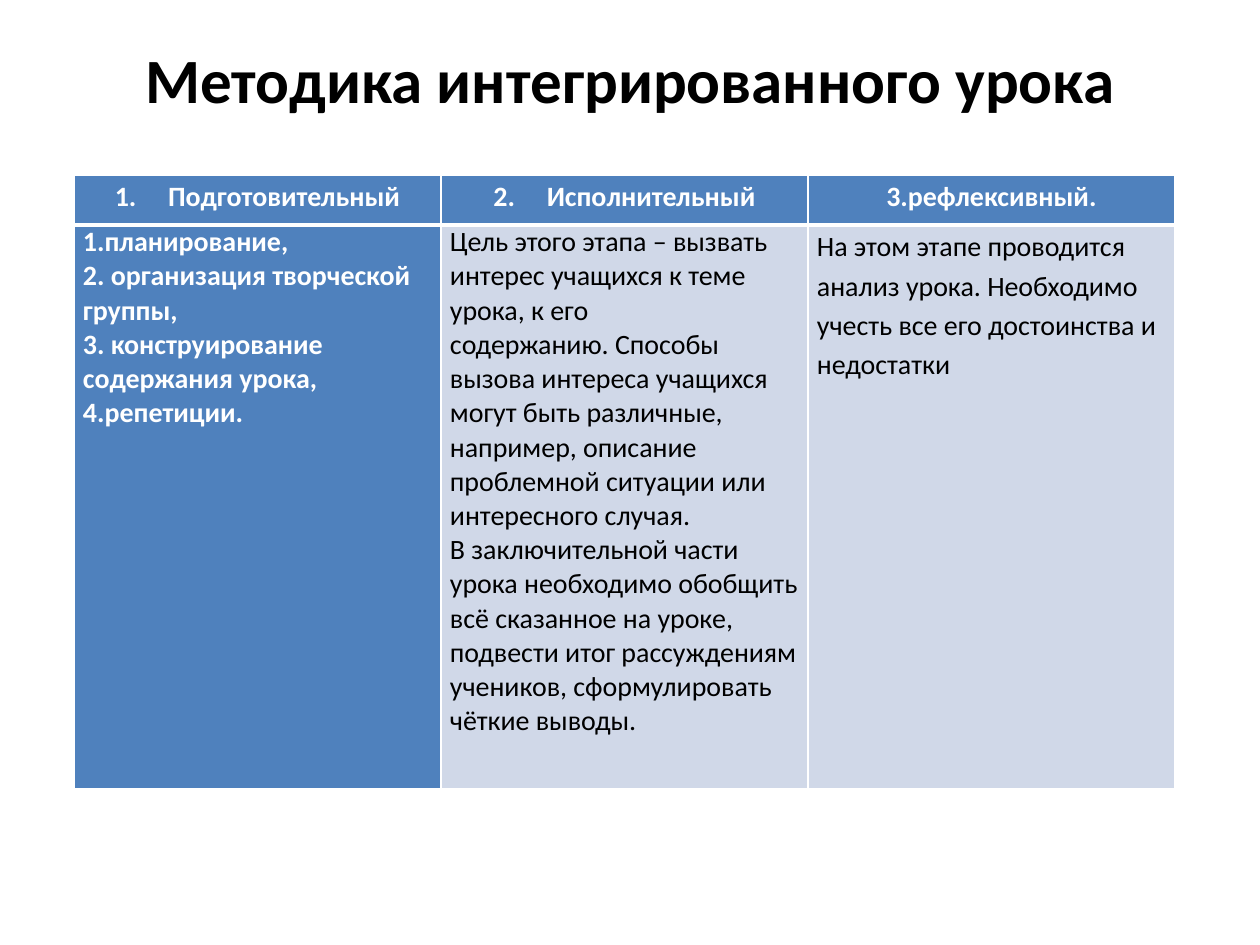
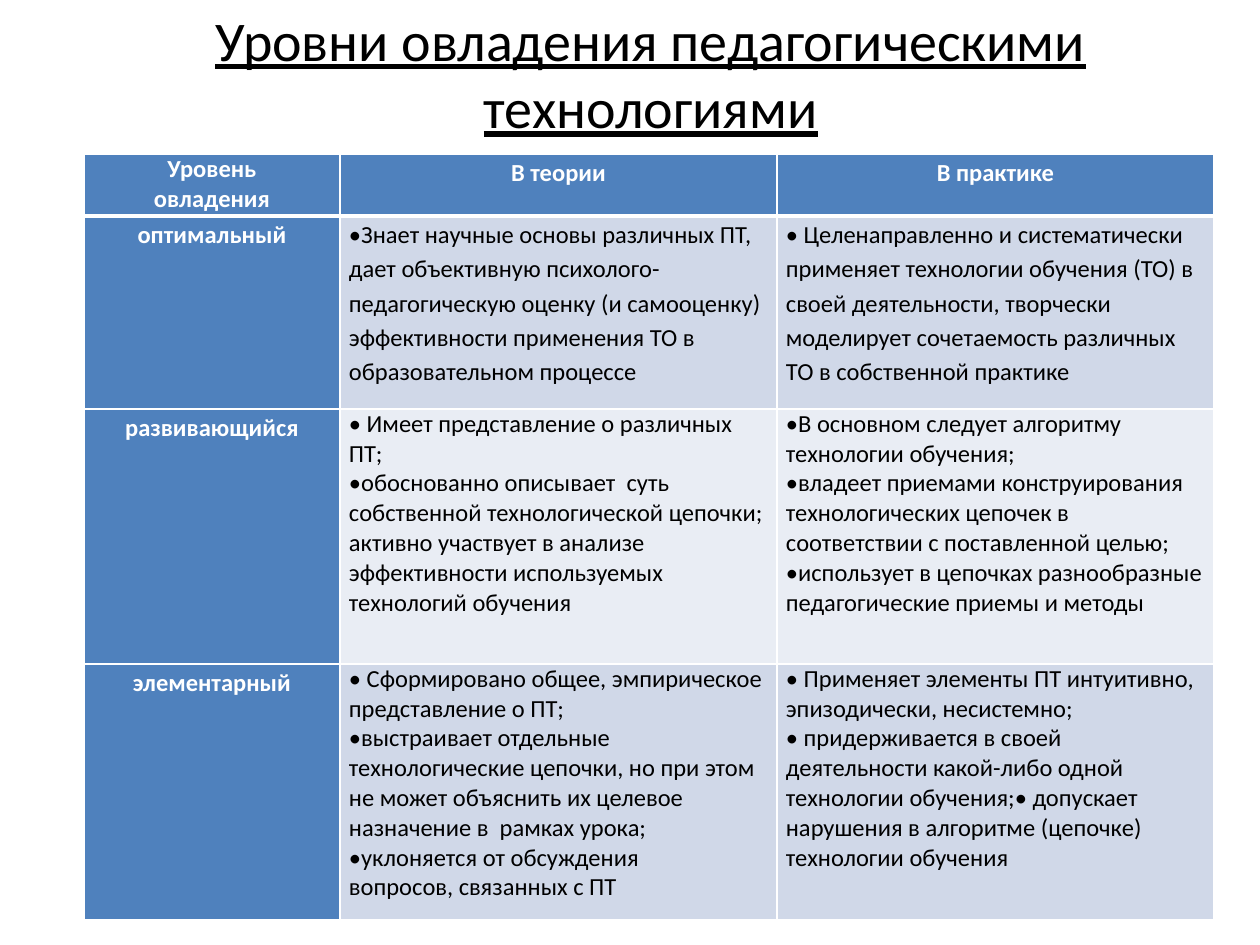
from lxml.etree import SubElement
from pptx import Presentation
from pptx.dml.color import RGBColor
from pptx.enum.text import MSO_ANCHOR, PP_ALIGN
from pptx.oxml.ns import qn
from pptx.util import Emu, Pt

PX = 914400 // 126
FONT = "Calibri"
BLACK, WHITE, ACCENT = "000000", "FFFFFF", "4F81BD"
BANDS = ["E9EDF4", "D0D8E8"]
WIDE_GAP = "|"       # a widened space between a number and its heading
FIXED_SPACE = "~"    # a space at which a line may not break
LOOSE_SPACING = 1.15

STAGES = [
    [["1.|Подготовительный"], ["2.|Исполнительный"], ["3.рефлексивный."]],
    [
        [
            "1.планирование,",
            "2. организация творческой группы,",
            "3. конструирование содержания урока,",
            "4.репетиции.",
        ],
        [
            "Цель этого этапа – вызвать интерес учащихся к теме урока, к его "
            "содержанию.~Способы вызова интереса учащихся могут быть различные, "
            "например, описание проблемной ситуации или интересного случая.",
            "В заключительной части урока необходимо обобщить всё сказанное на уроке, "
            "подвести итог рассуждениям учеников, сформулировать чёткие выводы.",
        ],
        [
            "На этом этапе проводится анализ урока. Необходимо учесть все его "
            "достоинства и недостатки",
        ],
    ],
]

LEVELS = [
    [["Уровень", "овладения"], ["В теории"], ["В практике"]],
    [
        ["оптимальный"],
        [
            "•Знает научные основы различных ПТ, дает объективную "
            "психолого-педагогическую оценку (и самооценку) эффективности "
            "применения ТО в образовательном процессе",
        ],
        [
            "• Целенаправленно и систематически применяет технологии обучения (ТО) "
            "в своей деятельности, творчески моделирует сочетаемость различных ТО "
            "в собственной практике",
        ],
    ],
    [
        ["развивающийся"],
        [
            "• Имеет представление о различных ПТ;",
            "•обоснованно описывает~ суть собственной технологической цепочки; "
            "активно участвует в анализе эффективности используемых технологий обучения",
        ],
        [
            "•В основном следует алгоритму технологии обучения;",
            "•владеет приемами конструирования технологических цепочек в соответствии "
            "с поставленной целью;",
            "•использует в цепочках разнообразные педагогические приемы и методы",
        ],
    ],
    [
        ["элементарный"],
        [
            "• Сформировано общее, эмпирическое представление о ПТ;",
            "•выстраивает отдельные технологические цепочки, но при этом не может "
            "объяснить их целевое назначение в~ рамках урока;",
            "•уклоняется от обсуждения",
            "вопросов, связанных с ПТ",
        ],
        [
            "• Применяет элементы ПТ интуитивно, эпизодически, несистемно;",
            "• придерживается в своей деятельности какой-либо одной технологии "
            "обучения;• допускает нарушения в алгоритме (цепочке) технологии обучения",
        ],
    ],
]


def px(length):
    return Emu(length * PX)


def rgb(color):
    return RGBColor.from_string(color)


def set_all(target, values):
    for name, value in values.items():
        setattr(target, name, value)


def add_run(paragraph, text, color, **font_format):
    run = paragraph.add_run()
    run.text = text.replace(FIXED_SPACE, chr(160))
    set_all(run.font, {"name": FONT, **font_format})
    run.font.color.rgb = rgb(color)
    return run


def add_title(slide, left, top, width, height, text, size, **font_format):
    frame = slide.shapes.add_textbox(px(left), px(top), px(width), px(height)).text_frame
    # Text sits one line height above the middle of the box
    line_height = Pt(size * 1.22)
    set_all(frame, {
        "word_wrap": True,
        "vertical_anchor": MSO_ANCHOR.MIDDLE,
        "margin_bottom": frame.margin_top + line_height,
    })
    paragraph = frame.paragraphs[0]
    paragraph.alignment = PP_ALIGN.CENTER
    add_run(paragraph, text, BLACK, size=Pt(size), **font_format)


def set_borders(cell, row):
    widths = {"L": 1, "R": 1, "T": 3 if row == 1 else 1, "B": 3 if row == 0 else 1}
    properties = cell._tc.get_or_add_tcPr()
    for side, width in widths.items():
        line = SubElement(properties, qn(f"a:ln{side}"), w=str(Pt(width)))
        fill = SubElement(line, qn("a:solidFill"))
        SubElement(fill, qn("a:srgbClr"), val=WHITE)


def fill_cell(cell, lines, row, column, size):
    is_heading = row == 0 or column == 0
    is_single = len(lines) == 1
    is_centred = row == 0 or (column == 0 and is_single)
    set_borders(cell, row)
    cell.fill.solid()
    cell.fill.fore_color.rgb = rgb(ACCENT if is_heading else BANDS[row % 2])
    set_all(cell, {"margin_left": px(9), "margin_right": px(9),
                   "margin_top": 0, "margin_bottom": 0})

    color = WHITE if is_heading else BLACK
    font_format = {"size": Pt(size), "bold": is_heading}
    for index, line in enumerate(lines):
        frame = cell.text_frame
        paragraph = frame.add_paragraph() if index else frame.paragraphs[0]
        set_all(paragraph, {
            "alignment": PP_ALIGN.CENTER if is_centred else PP_ALIGN.LEFT,
            "line_spacing": LOOSE_SPACING if is_single else 1.0,
        })
        number, gap, words = line.rpartition(WIDE_GAP)
        if gap:
            add_run(paragraph, number, color, **font_format)
            space = add_run(paragraph, " ", color, **font_format)
            space.font._element.set("spc", "1450")
        add_run(paragraph, words, color, **font_format)


def add_grid(slide, left, top, widths, heights, content, size):
    table = slide.shapes.add_table(
        len(heights), len(widths), px(left), px(top),
        px(sum(widths)), px(sum(heights))).table
    for column, width in zip(table.columns, widths):
        column.width = px(width)
    for row, height in zip(table.rows, heights):
        row.height = px(height)
    for r, row_content in enumerate(content):
        for c, lines in enumerate(row_content):
            fill_cell(table.cell(r, c), lines, r, c, size)


def main():
    deck = Presentation()
    set_all(deck, {"slide_width": px(1260), "slide_height": px(945)})
    blank = deck.slide_layouts[6]

    # Stages of the lesson
    stages = deck.slides.add_slide(blank)
    add_title(stages, 63, 38, 1134, 158, "Методика интегрированного урока", 36, bold=True)
    add_grid(stages, 74, 175, [367] * 3, [50, 564], STAGES, 16)

    # Levels of mastery
    levels = deck.slides.add_slide(blank)
    add_grid(levels, 84, 154, [256, 437, 437], [62, 193, 255, 256], LEVELS, 14)
    add_title(levels, 84, 37, 1134, 139,
              "Уровни овладения педагогическими технологиями", 32, underline=True)

    deck.save("out.pptx")


if __name__ == "__main__":
    main()
